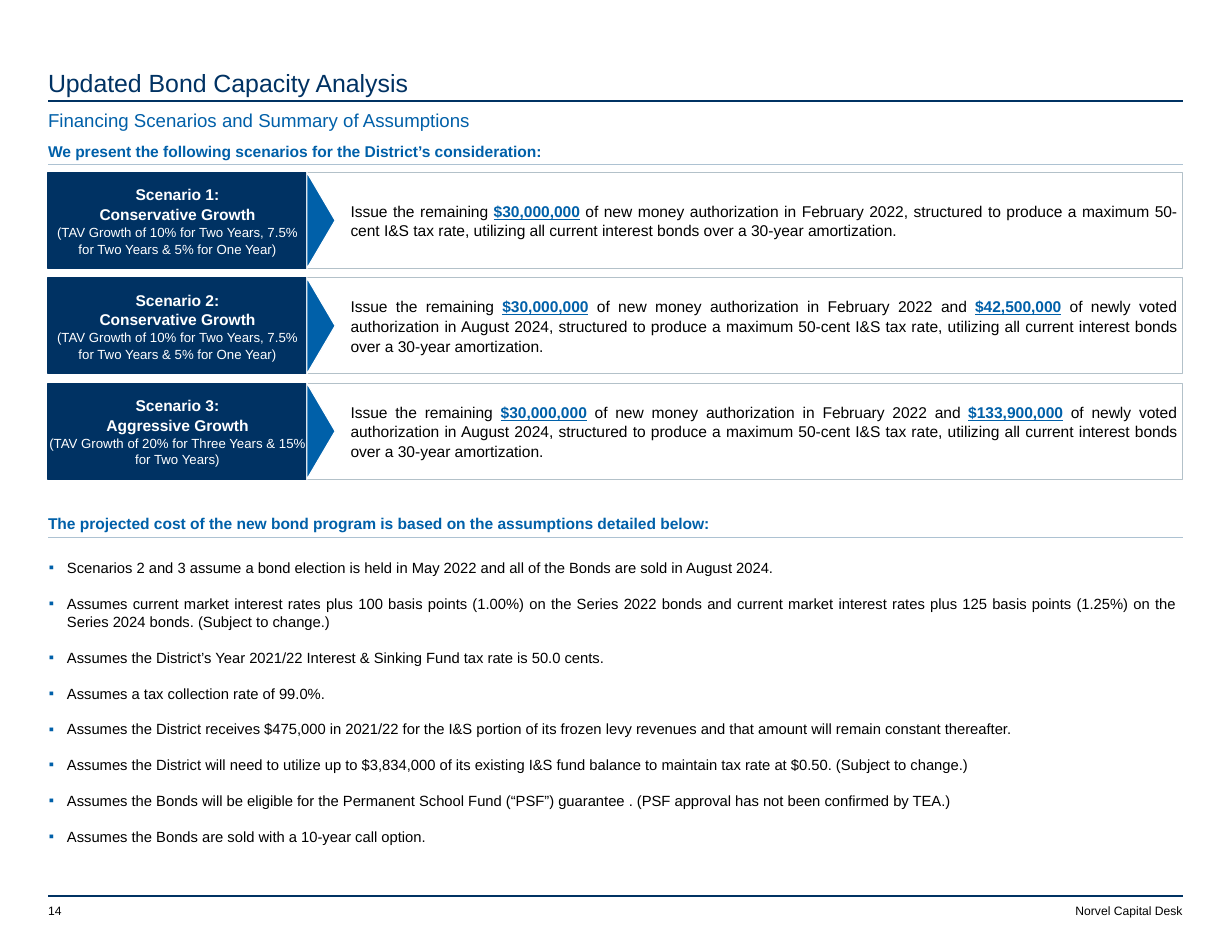
from dataclasses import dataclass

from lxml import etree
from pptx import Presentation
from pptx.dml.color import RGBColor
from pptx.enum.shapes import MSO_CONNECTOR, MSO_SHAPE
from pptx.enum.text import MSO_ANCHOR, PP_ALIGN
from pptx.oxml.ns import qn
from pptx.util import Cm, Pt

STRAIGHT = MSO_CONNECTOR.STRAIGHT
RECTANGLE, TRIANGLE = MSO_SHAPE.RECTANGLE, MSO_SHAPE.ISOSCELES_TRIANGLE
TOP, MIDDLE, BOTTOM = MSO_ANCHOR.TOP, MSO_ANCHOR.MIDDLE, MSO_ANCHOR.BOTTOM
LEFT, CENTER, RIGHT, JUSTIFY = PP_ALIGN.LEFT, PP_ALIGN.CENTER, PP_ALIGN.RIGHT, PP_ALIGN.JUSTIFY


@dataclass(frozen=True)
class Theme:
    font: str = "Arial"
    navy: str = "003263"
    blue: str = "0060A9"
    pale: str = "ADC2D2"
    border: str = "B3C1C9"
    white: str = "FFFFFF"
    black: str = "000000"
    title: float = 16
    subtitle: float = 12
    body: float = 10
    bullet: float = 9.5
    note: float = 8.5
    footer: float = 7.8
    line: float = 0.75
    spacing: float = 1.05


THEME = Theme()
MARGIN, WIDTH = 1.09, 25.73
LABEL_WIDTH, ARROW_DEPTH = 5.87, 0.64
SCENARIO_TOP, SCENARIO_HEIGHT, SCENARIO_PITCH = 3.91, 2.18, 2.39

CONSERVATIVE = ("Conservative Growth", "(TAV Growth of 10% for Two Years, 7.5% for Two Years & 5% for One Year)")
AGGRESSIVE = ("Aggressive Growth", "(TAV Growth of 20% for Three Years & 15% for Two Years)")
ISSUE = "Issue the remaining "
FIRST_ISSUE = " of new money authorization in February 2022"
STRUCTURE = "structured to produce a maximum 50-cent I&S tax rate, utilizing all current interest bonds over a 30-year amortization."
NEW_VOTE = " of newly voted authorization in August 2024, " + STRUCTURE
SCENARIOS = [
    (CONSERVATIVE, [ISSUE, "$30,000,000", FIRST_ISSUE + ", " + STRUCTURE]),
    (CONSERVATIVE, [ISSUE, "$30,000,000", FIRST_ISSUE + " and ", "$42,500,000", NEW_VOTE]),
    (AGGRESSIVE, [ISSUE, "$30,000,000", FIRST_ISSUE + " and ", "$133,900,000", NEW_VOTE]),
]
ASSUMPTIONS = [
    "Scenarios 2 and 3 assume a bond election is held in May 2022 and all of the Bonds are sold in August 2024.",
    "Assumes current market interest rates plus 100 basis points (1.00%) on the Series 2022 bonds and current market interest rates plus 125 basis points (1.25%) on the Series 2024 bonds. (Subject to change.)",
    "Assumes the District’s Year 2021/22 Interest & Sinking Fund tax rate is 50.0 cents.",
    "Assumes a tax collection rate of 99.0%.",
    "Assumes the District receives $475,000 in 2021/22 for the I&S portion of its frozen levy revenues and that amount will remain constant thereafter.",
    "Assumes the District will need to utilize up to $3,834,000 of its existing I&S fund balance to maintain tax rate at $0.50. (Subject to change.)",
    "Assumes the Bonds will be eligible for the Permanent School Fund (“PSF”) guarantee . (PSF approval has not been confirmed by TEA.)",
    "Assumes the Bonds are sold with a 10-year call option.",
]


def apply(target, values):
    for name, value in values.items():
        setattr(target, name, value)


def set_frame(shape, insets=(0, 0, 0, 0), anchor=TOP):
    left, top, right, bottom = map(Cm, insets)
    apply(shape.text_frame, {
        "word_wrap": True, "vertical_anchor": anchor, "margin_left": left,
        "margin_top": top, "margin_right": right, "margin_bottom": bottom,
    })
    return shape.text_frame


def add_span(para, text, size, color, **values):
    span = para.add_run()
    span.text = text
    apply(span.font, {"name": THEME.font, "size": Pt(size), **values})
    span.font.color.rgb = RGBColor.from_string(color)


def next_para(frame, index, align):
    para = frame.add_paragraph() if index else frame.paragraphs[0]
    apply(para, {"alignment": align, "line_spacing": THEME.spacing})
    return para


def add_text(page, box, text, size, color, align=LEFT, insets=(0, 0, 0, 0), anchor=TOP, **values):
    frame = set_frame(page.shapes.add_textbox(*map(Cm, box)), insets, anchor)
    add_span(next_para(frame, 0, align), text, size, color, **values)


def add_rule(page, left, top, width, color):
    rule = page.shapes.add_connector(STRAIGHT, Cm(left), Cm(top), Cm(left + width), Cm(top))
    rule.line.color.rgb = RGBColor.from_string(color)
    rule.line.width = Pt(THEME.line)
    etree.SubElement(rule._element.spPr, qn("a:effectLst"))


def add_block(page, kind, box, fill, line):
    block = page.shapes.add_shape(kind, *map(Cm, box))
    block.shadow.inherit = False
    block.fill.solid()
    block.fill.fore_color.rgb = RGBColor.from_string(fill)
    block.line.color.rgb = RGBColor.from_string(line)
    block.line.width = Pt(THEME.line)
    return block


def add_header(page, box):
    left, top, width, height = box
    add_text(page, (left, top, width, 0.69), "Updated Bond Capacity Analysis", THEME.title, THEME.navy)
    add_rule(page, left, top + 0.79, width, THEME.navy)
    add_text(page, (left, top + 0.94, width, height - 0.94),
             "Financing Scenarios and Summary of Assumptions", THEME.subtitle, THEME.blue)


def add_heading(page, box, text):
    left, top, width, height = box
    add_text(page, box, text, THEME.body, THEME.blue, insets=(0, 0, 0.1, 0.1), anchor=BOTTOM, bold=True)
    add_rule(page, left, top + height, width, THEME.pale)


def add_scenario(page, box, number, label, parts):
    left, top, width, height = box
    split = left + LABEL_WIDTH
    name, growth = label

    panel = add_block(page, RECTANGLE, (left, top, LABEL_WIDTH, height), THEME.navy, THEME.navy)
    frame = set_frame(panel, (0, 0.13, 0, 0.13), MIDDLE)
    lines = [(f"Scenario {number}:", THEME.body, True), (name, THEME.body, True), (growth, THEME.note, False)]
    for index, (text, size, bold) in enumerate(lines):
        add_span(next_para(frame, index, CENTER), text, size, THEME.white, bold=bold)

    panel = add_block(page, RECTANGLE, (split, top, width - LABEL_WIDTH, height), THEME.white, THEME.border)
    frame = set_frame(panel, (0.99, 0.13, 0.13, 0.13), MIDDLE)
    para = next_para(frame, 0, JUSTIFY)
    for index, text in enumerate(parts):
        amount = index % 2 == 1
        add_span(para, text, THEME.body, THEME.blue if amount else THEME.black, bold=amount, underline=amount)

    arrow_box = (split + (ARROW_DEPTH - height) / 2, top + (height - ARROW_DEPTH) / 2, height, ARROW_DEPTH)
    arrow = add_block(page, TRIANGLE, arrow_box, THEME.blue, THEME.white)
    arrow.rotation = 90


def add_bullet(para):
    properties = para._p.get_or_add_pPr()
    properties.set("marL", str(Cm(0.43)))
    properties.set("indent", str(-Cm(0.41)))
    color = etree.SubElement(properties, qn("a:buClr"))
    etree.SubElement(color, qn("a:srgbClr"), val=THEME.blue)
    etree.SubElement(properties, qn("a:buFont"), typeface=THEME.font)
    etree.SubElement(properties, qn("a:buChar"), char="▪")


def add_assumptions(page, box):
    frame = set_frame(page.shapes.add_textbox(*map(Cm, box)), (0, 0.25, 0.13, 0.13))
    for index, text in enumerate(ASSUMPTIONS):
        para = next_para(frame, index, JUSTIFY)
        add_bullet(para)
        para.space_after = Pt(11)
        add_span(para, text, THEME.bullet, THEME.black)


def add_footer(page, box):
    left, top, width, height = box
    add_rule(page, left, top, width, THEME.navy)
    for text, align in (("14", LEFT), ("Norvel Capital Desk", RIGHT)):
        start = left if align == LEFT else left + width / 2
        add_text(page, (start, top, width / 2, height), text, THEME.footer, THEME.black,
                 align, insets=(0, 0.15, 0, 0))


def main():
    deck = Presentation()
    apply(deck, {"slide_width": Cm(27.94), "slide_height": Cm(21.59)})
    page = deck.slides.add_slide(deck.slide_layouts[6])
    add_header(page, (MARGIN, 1.5, WIDTH, 1.45))
    add_heading(page, (MARGIN, 3.2, WIDTH, 0.54),
                "We present the following scenarios for the District’s consideration:")
    for index, (label, parts) in enumerate(SCENARIOS):
        top = SCENARIO_TOP + index * SCENARIO_PITCH
        add_scenario(page, (MARGIN, top, WIDTH, SCENARIO_HEIGHT), index + 1, label, parts)
    add_heading(page, (MARGIN, 11.65, WIDTH, 0.54),
                "The projected cost of the new bond program is based on the assumptions detailed below:")
    add_assumptions(page, (MARGIN, 12.4, WIDTH, 7.59))
    add_footer(page, (MARGIN, 20.32, WIDTH, 0.48))
    deck.save("out.pptx")


if __name__ == "__main__":
    main()
